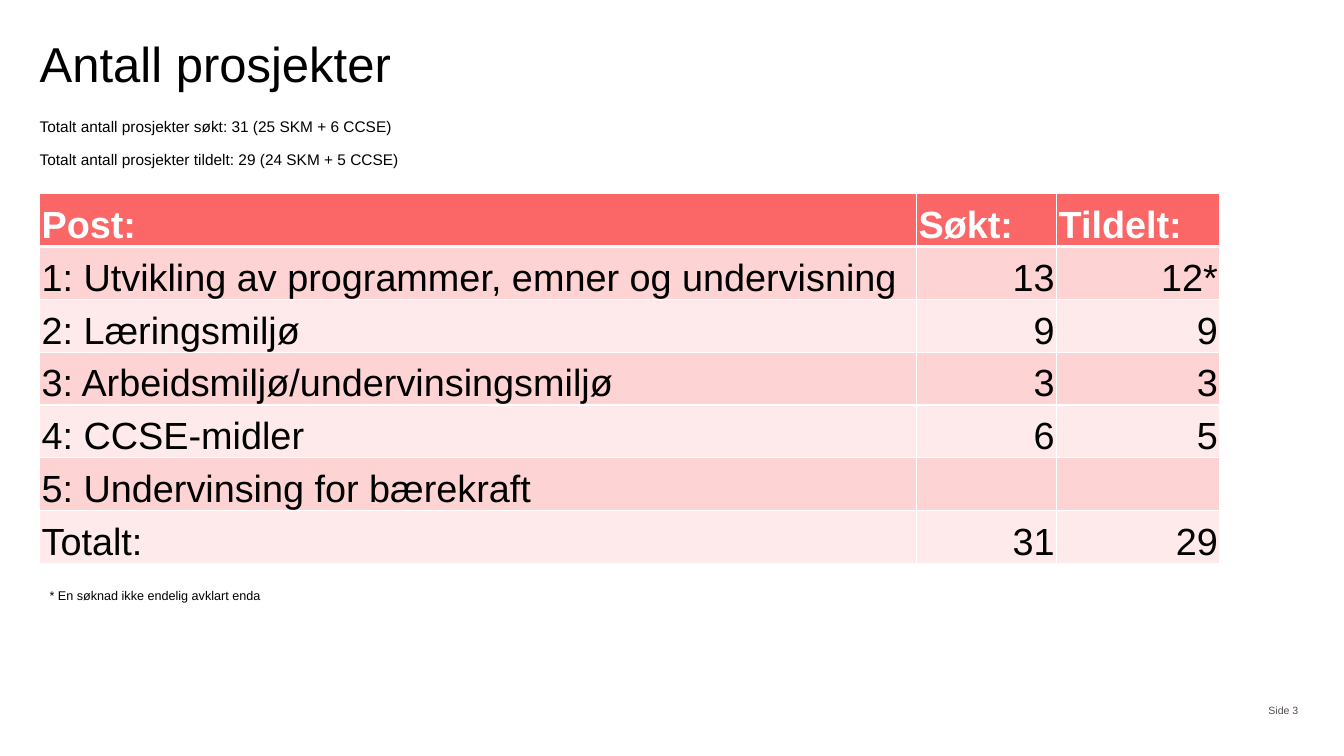
import pptx
import pptx.util
import pptx.dml.color
import pptx.enum.text
import pptx.oxml
import pptx.oxml.ns

Cm, Pt = pptx.util.Cm, pptx.util.Pt
ALIGN = pptx.enum.text.PP_ALIGN
ANCHOR = pptx.enum.text.MSO_ANCHOR

LEFT, WIDE = 1, 31.88
POSTS = [
    ("Post:", "Søkt:", "Tildelt:"),
    ("1: Utvikling av programmer, emner og undervisning", "13", "12*"),
    ("2: Læringsmiljø", "9", "9"),
    ("3: Arbeidsmiljø/undervinsingsmiljø", "3", "3"),
    ("4: CCSE-midler", "6", "5"),
    ("5: Undervinsing for bærekraft", "", ""),
    ("Totalt:", "31", "29"),
]


def color(code):
    return pptx.dml.color.RGBColor.from_string(code)


def style(para, size, code="000000", bold=False, align=ALIGN.LEFT):
    para.alignment = align
    font = para.font
    font.name, font.size, font.bold = "Arial", Pt(size), bold
    font.color.rgb = color(code)


def inset(frame, sides):
    (frame.margin_left, frame.margin_top,
     frame.margin_right, frame.margin_bottom) = [Cm(side) for side in sides]


def add_text(slide, box, lines, size, code="000000", align=ALIGN.LEFT):
    frame = slide.shapes.add_textbox(*[Cm(n) for n in box]).text_frame
    frame.word_wrap = True
    frame.text = "\n".join(lines)
    for para in frame.paragraphs:
        style(para, size, code, align=align)
    return frame


def add_title(slide, box, text):
    title = slide.shapes.title
    title.left, title.top, title.width, title.height = [Cm(n) for n in box]
    frame = title.text_frame
    frame.text = text
    frame.vertical_anchor = ANCHOR.TOP
    frame.auto_size = pptx.enum.text.MSO_AUTO_SIZE.NONE
    inset(frame, (0, 0, 0, 0))
    style(frame.paragraphs[0], 35)
    frame.paragraphs[0].line_spacing = 0.9


def add_intro(slide, box, lines):
    frame = add_text(slide, box, lines, 11)
    inset(frame, (0, 0, 0, 0))
    for i, para in enumerate(frame.paragraphs):
        para.line_spacing = 0.9
        para.space_before = Pt(11.5 if i else 0)


def set_edges(cell, widths):
    # Border lines come before the fill in the cell properties
    props = cell._tc.get_or_add_tcPr()
    for i, (side, width) in enumerate(zip("LRTB", widths)):
        props.insert(i, pptx.oxml.parse_xml(
            f'<a:ln{side} {pptx.oxml.ns.nsdecls("a")} w="{Pt(width)}">'
            '<a:solidFill><a:srgbClr val="FFFFFF"/></a:solidFill>'
            f'</a:ln{side}>'))


def add_grid(slide, box, rows, widths):
    table = slide.shapes.add_table(
        len(rows), len(widths), *[Cm(n) for n in box]).table
    for col, width in zip(table.columns, widths):
        col.width = Cm(width)
    for r, row in enumerate(rows):
        table.rows[r].height = Cm(box[3] / len(rows))
        head = r == 0
        fill = "FB6666" if head else ("FEEAEA", "FDD3D3")[r % 2]
        for c, text in enumerate(row):
            cell = table.cell(r, c)
            cell.text = text
            cell.vertical_anchor = ANCHOR.BOTTOM
            inset(cell, (0.05, 0.05, 0.05, 0))
            cell.fill.solid()
            cell.fill.fore_color.rgb = color(fill)
            style(cell.text_frame.paragraphs[0], 27,
                  "FFFFFF" if head else "000000", head,
                  ALIGN.RIGHT if c and not head else ALIGN.LEFT)
            set_edges(cell, (1, 1, 3 if r == 1 else 1, 3 if head else 1))


def add_page(slide, box, text):
    frame = add_text(slide, box, [text], 7.5, "524B48", ALIGN.RIGHT)
    frame.vertical_anchor = ANCHOR.MIDDLE


def main():
    deck = pptx.Presentation()
    deck.slide_width, deck.slide_height = Cm(33.87), Cm(19.05)
    slide = deck.slides.add_slide(deck.slide_layouts[5])

    # Heading and totals
    add_title(slide, (LEFT, 1, WIDE, 1.5), "Antall prosjekter")
    add_intro(slide, (LEFT, 3, WIDE, 1.37), [
        "Totalt antall prosjekter søkt: 31 (25 SKM + 6 CCSE)",
        "Totalt antall prosjekter tildelt: 29 (24 SKM + 5 CCSE)"])

    # Table of posts with its footnote
    add_grid(slide, (LEFT, 4.88, 29.74, 9.32), POSTS, (22.1, 3.53, 4.11))
    add_text(slide, (LEFT, 14.7, 6.63, 1.02),
             ["* En søknad ikke endelig avklart enda"], 9)

    # Page number
    add_page(slide, (31.29, 17.4, 1.68, 1.02), "Side 3")
    deck.save("out.pptx")


if __name__ == "__main__":
    main()
